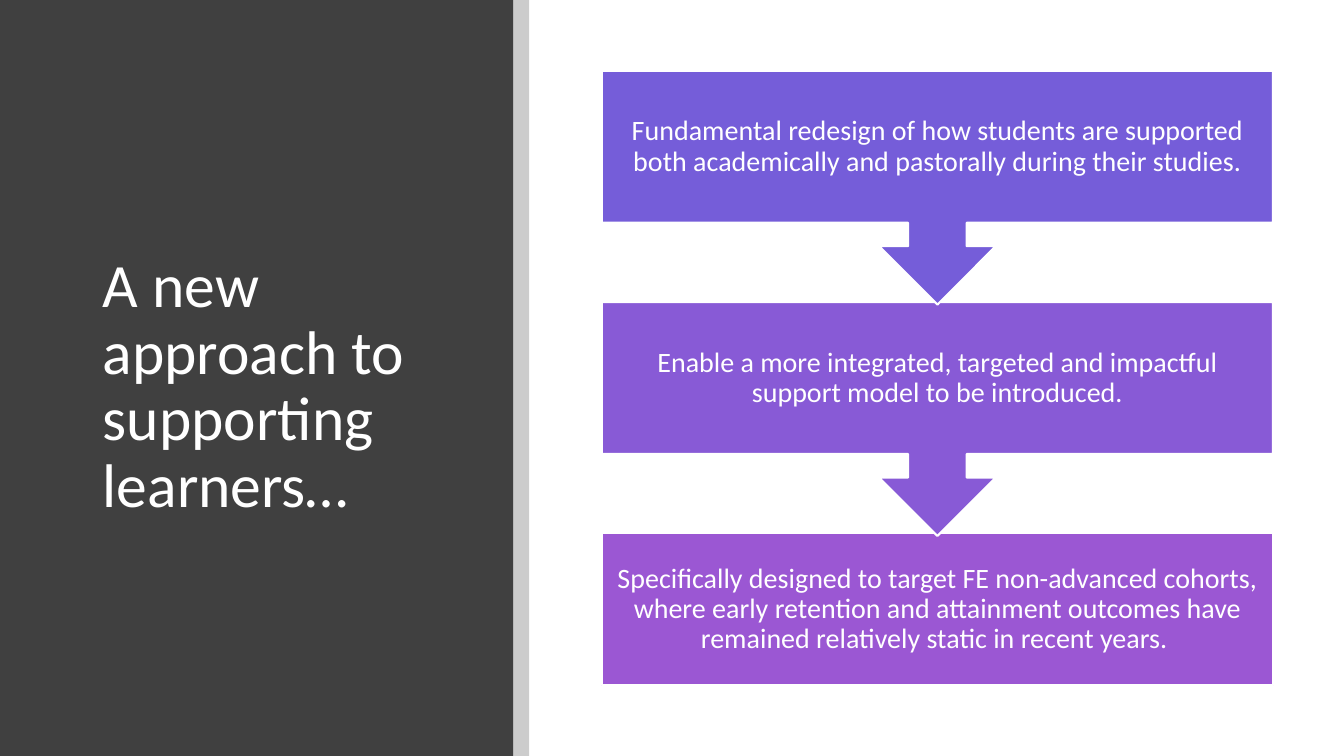
import pptx
import pptx.util
import pptx.dml.color
import pptx.enum.shapes
import pptx.enum.text
import pptx.oxml.ns
import lxml.etree

Pt = pptx.util.Pt
Shape = pptx.enum.shapes.MSO_SHAPE
Align = pptx.enum.text.PP_ALIGN
Anchor = pptx.enum.text.MSO_ANCHOR

COLORS = {
    "panel": "404040",
    "strip": "000000",
    "white": "FFFFFF",
    "first": "755DD9",
    "second": "885AD6",
    "third": "9B57D3",
}

STEPS = [
    ("first", "Fundamental redesign of how students are supported both academically and pastorally during their studies."),
    ("second", "Enable a more integrated, targeted and impactful support model to be introduced."),
    ("third", "Specifically designed to target FE non-advanced cohorts, where early retention and attainment outcomes have remained relatively static in recent years. "),
]

LEFT, TOP, WIDTH, PITCH = 429.84, 50.6, 479.5, 165.2
CALL, BOX = 167, 108.6


def color(name):
    return pptx.dml.color.RGBColor.from_string(COLORS[name])


def add_block(slide, kind, box, fill):
    block = slide.shapes.add_shape(kind, *map(Pt, box))
    block.shadow.inherit = False
    block.fill.solid()
    block.fill.fore_color.rgb = color(fill)
    block.line.fill.background()
    return block


def set_alpha(block, percent):
    tone = block.fill._xPr.find(".//" + pptx.oxml.ns.qn("a:srgbClr"))
    alpha = lxml.etree.SubElement(tone, pptx.oxml.ns.qn("a:alpha"))
    alpha.set("val", str(percent * 1000))


def set_text(shape, text, size, align, inset):
    frame = shape.text_frame
    frame.text = text
    frame.word_wrap = True
    frame.auto_size = pptx.enum.text.MSO_AUTO_SIZE.NONE
    frame.vertical_anchor = Anchor.MIDDLE
    frame.margin_left = frame.margin_right = Pt(inset[0])
    frame.margin_top = frame.margin_bottom = Pt(inset[1])
    line = frame.paragraphs[0]
    line.alignment = align
    line.line_spacing = 0.9
    font = line.runs[0].font
    font.name = "Calibri"
    font.size = Pt(size)
    font.color.rgb = color("white")


def add_title(slide, text):
    title = slide.shapes.title
    title.left, title.top = Pt(66.24), Pt(64.08)
    title.width, title.height = Pt(262.8), Pt(425.5)
    set_text(title, text, 44, Align.LEFT, (7.2, 3.6))
    slide.shapes._spTree.append(title._element)


def add_step(slide, index, fill, text):
    last = index == len(STEPS) - 1
    kind = Shape.RECTANGLE if last else Shape.DOWN_ARROW_CALLOUT
    height = BOX if last else CALL
    step = add_block(slide, kind, (LEFT, TOP + index * PITCH, WIDTH, height), fill)
    step.line.color.rgb = color("white")
    step.line.width = Pt(1.5)
    set_text(step, text, 20, Align.CENTER, (11.2, 11.2))


def main():
    deck = pptx.Presentation()
    deck.slide_width, deck.slide_height = Pt(960), Pt(540)
    slide = deck.slides.add_slide(deck.slide_layouts[5])
    add_block(slide, Shape.RECTANGLE, (0, 0, 366.5, 540), "panel")
    add_title(slide, "A new approach to supporting learners…")
    strip = add_block(slide, Shape.RECTANGLE, (366.5, 0, 11.5, 540), "strip")
    set_alpha(strip, 20)
    for index, (fill, text) in reversed(list(enumerate(STEPS))):
        add_step(slide, index, fill, text)
    deck.save("out.pptx")


if __name__ == "__main__":
    main()
